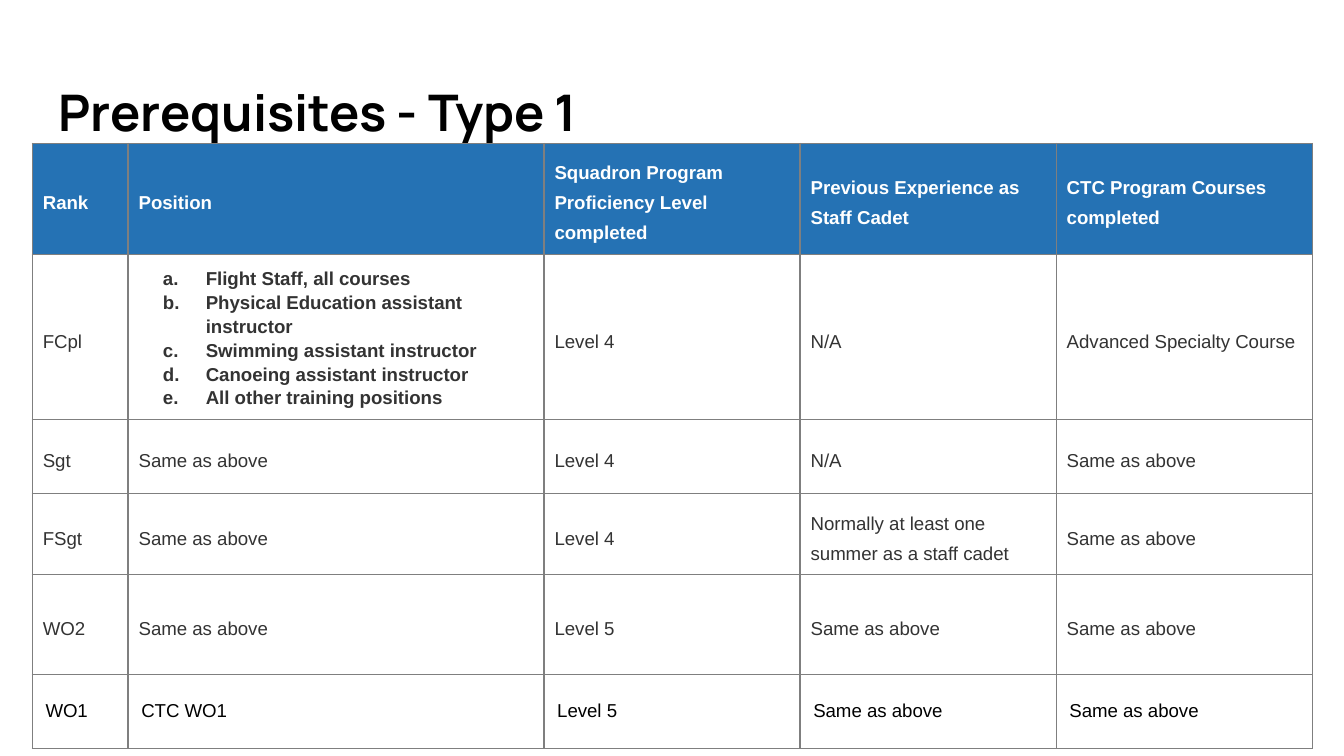
from lxml.etree import SubElement
from pptx import Presentation
from pptx.dml.color import RGBColor
from pptx.enum.text import MSO_ANCHOR, MSO_AUTO_SIZE, PP_ALIGN
from pptx.oxml.ns import qn
from pptx.util import Cm, Pt

COLOURS = {
    "black": "000000",
    "white": "FFFFFF",
    "header": "2572B4",
    "body": "333333",
    "border": "7F7F7F",
}
SAME = "Same as above"
POSITIONS = [
    "Flight Staff, all courses",
    "Physical Education assistant instructor",
    "Swimming assistant instructor",
    "Canoeing assistant instructor",
    "All other training positions",
]
ROWS = [
    ["Rank", "Position", "Squadron Program Proficiency Level completed",
     "Previous Experience as Staff Cadet", "CTC Program Courses completed"],
    ["FCpl", POSITIONS, "Level 4", "N/A", "Advanced Specialty Course"],
    ["Sgt", SAME, "Level 4", "N/A", SAME],
    ["FSgt", SAME, "Level 4", "Normally at least one summer as a staff cadet", SAME],
    ["WO2", SAME, "Level 5", SAME, SAME],
    ["WO1", "CTC WO1", "Level 5", SAME, SAME],
]
COLUMN_WIDTHS = [1.81, 7.86, 4.84, 4.84, 4.84]
ROW_HEIGHTS = [1.88, 2.54, 1.4, 1.4, 1.88, 1.4]


class SlideBuilder:
    title_font = "Manrope"
    table_font = "Arial"

    def __init__(self, slide):
        self.slide = slide

    def format_runs(self, paragraph, font, size, colour, bold):
        for run in paragraph.runs:
            run.font.name = font
            run.font.size = Pt(size)
            run.font.bold = bold
            run.font.color.rgb = RGBColor.from_string(COLOURS[colour])

    def title(self, text, left, top, width, height):
        shape = self.slide.shapes.title
        shape.left, shape.top = Cm(left), Cm(top)
        shape.width, shape.height = Cm(width), Cm(height)
        frame = shape.text_frame
        frame.text = text
        frame.word_wrap = True
        frame.auto_size = MSO_AUTO_SIZE.NONE
        frame.vertical_anchor = MSO_ANCHOR.MIDDLE
        frame.margin_left = frame.margin_right = Cm(0.25)
        frame.margin_top = frame.margin_bottom = Cm(0.25)
        paragraph = frame.paragraphs[0]
        paragraph.alignment = PP_ALIGN.LEFT
        self.format_runs(paragraph, self.title_font, 27, "black", True)

    def table(self, rows, left, top, column_widths, row_heights):
        table = self.slide.shapes.add_table(
            len(rows), len(column_widths), Cm(left), Cm(top),
            Cm(sum(column_widths)), Cm(sum(row_heights))).table
        table.first_row = table.horz_banding = False
        for column, width in zip(table.columns, column_widths):
            column.width = Cm(width)
        for row, height in zip(table.rows, row_heights):
            row.height = Cm(height)
        for row_index, row in enumerate(rows):
            for column_index, content in enumerate(row):
                self.cell(table.cell(row_index, column_index), content,
                          is_header=row_index == 0,
                          is_last=row_index == len(rows) - 1)

    def cell(self, cell, content, is_header, is_last):
        margin = Cm(0.25 if is_last else 0.2)
        cell.margin_left = cell.margin_right = margin
        cell.margin_top = cell.margin_bottom = margin
        cell.vertical_anchor = MSO_ANCHOR.MIDDLE
        self.borders(cell)
        if is_header:
            cell.fill.solid()
            cell.fill.fore_color.rgb = RGBColor.from_string(COLOURS["header"])
        else:
            cell.fill.background()

        is_list = isinstance(content, list)
        colour = "white" if is_header else "black" if is_last else "body"
        cell.text_frame.text = "\n".join(content) if is_list else content
        for paragraph in cell.text_frame.paragraphs:
            if is_list:
                paragraph.line_spacing = 1.15
                self.lettering(paragraph)
            elif not is_last:
                paragraph.line_spacing = 1.44
                paragraph.space_after = Pt(17)
            self.format_runs(paragraph, self.table_font, 10, colour,
                             is_header or is_list)

    def borders(self, cell):
        properties = cell._tc.get_or_add_tcPr()
        for side in ("lnL", "lnR", "lnT", "lnB"):
            line = SubElement(properties, qn(f"a:{side}"), w=str(Pt(0.75)))
            fill = SubElement(line, qn("a:solidFill"))
            SubElement(fill, qn("a:srgbClr"), val=COLOURS["border"])

    def lettering(self, paragraph):
        properties = paragraph._p.get_or_add_pPr()
        properties.set("marL", str(Cm(1.27)))
        properties.set("indent", str(-Cm(0.81)))
        colour = SubElement(properties, qn("a:buClr"))
        SubElement(colour, qn("a:srgbClr"), val=COLOURS["body"])
        SubElement(properties, qn("a:buFont"), typeface=self.table_font)
        SubElement(properties, qn("a:buAutoNum"), type="alphaLcPeriod")


def main():
    presentation = Presentation()
    presentation.slide_width = Cm(25.4)
    presentation.slide_height = Cm(14.29)
    slide = presentation.slides.add_slide(presentation.slide_layouts[5])
    builder = SlideBuilder(slide)
    builder.title("Prerequisites - Type 1", 0.86, 1.24, 23.67, 1.73)
    builder.table(ROWS, 0.61, 2.71, COLUMN_WIDTHS, ROW_HEIGHTS)
    presentation.save("out.pptx")


if __name__ == "__main__":
    main()
